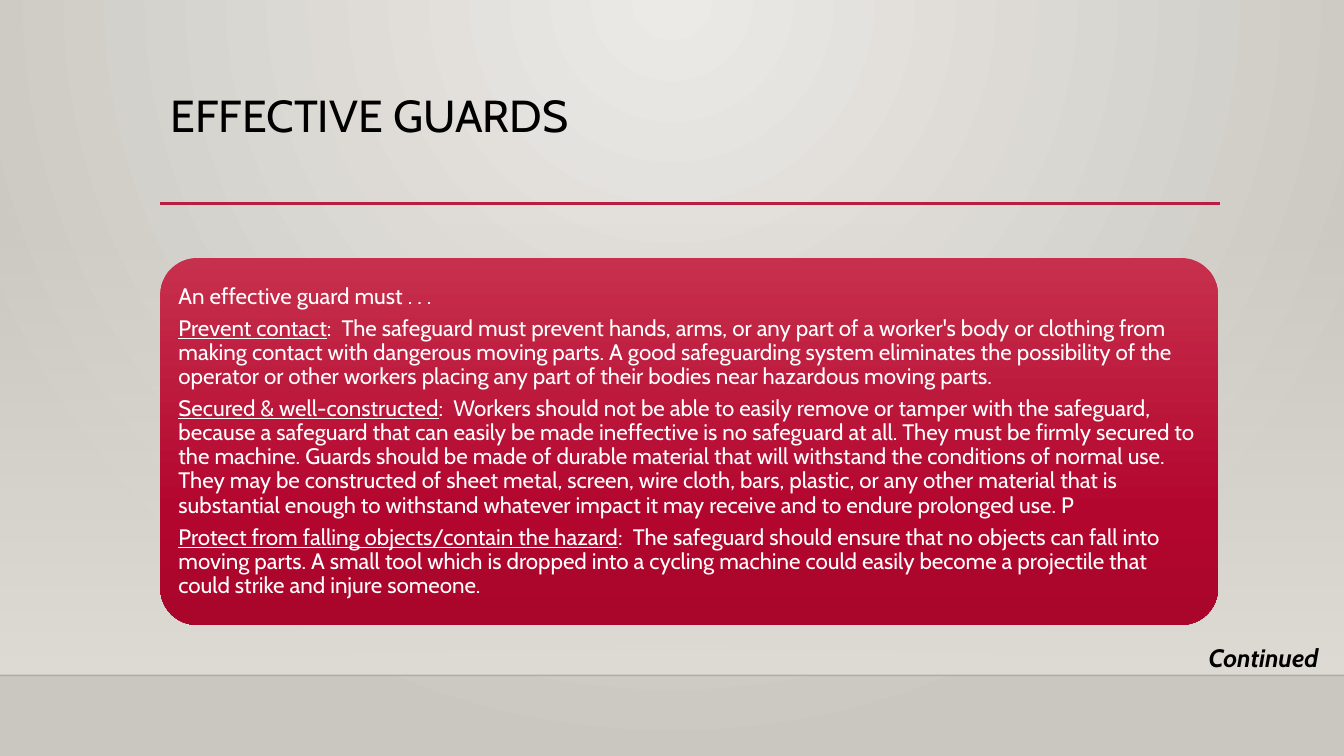
from lxml import etree
from pptx import Presentation
from pptx.dml.color import RGBColor
from pptx.enum.shapes import MSO_CONNECTOR, MSO_SHAPE
from pptx.enum.text import MSO_ANCHOR, MSO_AUTO_SIZE, PP_ALIGN
from pptx.oxml.ns import qn
from pptx.util import Inches, Pt

# Content
TITLE = "EFFECTIVE GUARDS"
FOOTER = "Continued"
GUARD_RULES = [  # underlined term, explanation
    ("", "An effective guard must . . ."),
    ("Prevent contact",
     ":  The safeguard must prevent hands, arms, or any part of a worker's body or clothing "
     "from making contact with dangerous moving parts. A good safeguarding system eliminates "
     "the possibility of the operator or other workers placing any part of their bodies near "
     "hazardous moving parts."),
    ("Secured & well-constructed",
     ":  Workers should not be able to easily remove or tamper with the safeguard, because a "
     "safeguard that can easily be made ineffective is no safeguard at all. They must be "
     "firmly secured to the machine. Guards should be made of durable material that will "
     "withstand the conditions of normal use. They may be constructed of sheet metal, screen, "
     "wire cloth, bars, plastic, or any other material that is substantial enough to withstand "
     "whatever impact it may receive and to endure prolonged use. P"),
    ("Protect from falling objects/contain the hazard",
     ":  The safeguard should ensure that no objects can fall into moving parts. A small tool "
     "which is dropped into a cycling machine could easily become a projectile that could "
     "strike and injure someone."),
]

# Look
COLORS = {
    "text": "000000", "panel text": "FFFFFF", "rule": "B71E42", "floor line": "000001",
    "center": "ECEAE7", "edge": "CAC7C1", "wall": "DFDBD5",
    "panel top": "C7304C", "panel middle": "B3062F", "panel bottom": "AA062C",
}
FONT = "Cabin"
WIDTH, HEIGHT = 13.33, 7.5
FLOOR = 6.7
WALL_TOP = 2.21
LEFT = 1.59
PANEL = (LEFT, 2.56, 10.49, 3.64)
PANEL_INSET = 0.11
DOWNWARD = '<a:lin ang="5400000" scaled="0"/>'
FROM_TOP_CENTER = ('<a:path path="circle"><a:fillToRect l="43000" t="0" r="43000" b="100000"/>'
                   '</a:path>')
NAMESPACE = 'xmlns:a="http://schemas.openxmlformats.org/drawingml/2006/main"'


def set_all(target, values):
    for name, value in values.items():
        setattr(target, name, value)


def style_font(font, size, color, **values):
    set_all(font, {"name": FONT, "size": Pt(size), **values})
    font.color.rgb = RGBColor.from_string(COLORS[color])


def apply_gradient(fill, properties, stops, direction):
    """Fill with (position %, color, opacity %) stops."""
    fill.solid()
    stop_xml = "".join(
        f'<a:gs pos="{position * 1000}"><a:srgbClr val="{COLORS[color]}">'
        f'<a:alpha val="{opacity * 1000}"/></a:srgbClr></a:gs>'
        for position, color, opacity in stops)
    gradient = etree.fromstring(
        f'<a:gradFill {NAMESPACE} rotWithShape="1"><a:gsLst>{stop_xml}</a:gsLst>'
        f'{direction}</a:gradFill>')
    properties.replace(properties.find(qn("a:solidFill")), gradient)


def add_gradient_shape(kind, box, stops):
    shape = slide.shapes.add_shape(kind, *map(Inches, box))
    shape.shadow.inherit = False
    shape.line.fill.background()
    apply_gradient(shape.fill, shape.element.spPr, stops, DOWNWARD)
    return shape


def add_rule(left, right, top, color, width):
    rule = slide.shapes.add_connector(
        MSO_CONNECTOR.STRAIGHT, Inches(left), Inches(top), Inches(right), Inches(top))
    rule.line.color.rgb = RGBColor.from_string(COLORS[color])
    rule.line.width = Pt(width)
    etree.SubElement(rule.element.spPr, qn("a:effectLst"))
    return rule


def place(shape, box):
    set_all(shape, dict(zip(("left", "top", "width", "height"), map(Inches, box))))


presentation = Presentation()
set_all(presentation, {"slide_width": Inches(WIDTH), "slide_height": Inches(HEIGHT)})
slide = presentation.slides.add_slide(presentation.slide_layouts[1])

# Background, wall and floor
background_fill = slide.background.fill
background_fill.solid()
apply_gradient(background_fill, slide.element.find(".//" + qn("p:bgPr")),
               [(0, "center", 100), (100, "edge", 100)], FROM_TOP_CENTER)
add_gradient_shape(MSO_SHAPE.RECTANGLE, (0, WALL_TOP, WIDTH, FLOOR - WALL_TOP),
                   [(0, "wall", 0), (100, "wall", 100)])
floor_line = add_rule(0, WIDTH, FLOOR, "floor line", 1)
floor_color = floor_line.element.spPr.find(".//" + qn("a:srgbClr"))
etree.SubElement(floor_color, qn("a:alpha"), val="20000")

# Title and its rule
add_rule(LEFT, 12.1, 2.02, "rule", 2.5)
title = slide.shapes.title
place(title, (LEFT, 0.88, 10.5, 1.15))
title.text_frame.text = TITLE
set_all(title.text_frame, {"vertical_anchor": MSO_ANCHOR.TOP, "word_wrap": True,
                           "auto_size": MSO_AUTO_SIZE.NONE})
heading = title.text_frame.paragraphs[0]
set_all(heading, {"alignment": PP_ALIGN.LEFT, "line_spacing": 0.9})
style_font(heading.font, 32, "text")

# Red panel
panel = add_gradient_shape(
    MSO_SHAPE.ROUNDED_RECTANGLE, PANEL,
    [(0, "panel top", 100), (69, "panel middle", 100), (100, "panel bottom", 100)])
panel.adjustments[0] = 0.1

# Guard rules, raised above the panel
body = slide.placeholders[1]
slide.shapes.element.append(body.element)
left, top, width, height = PANEL
place(body, (left + PANEL_INSET, top + PANEL_INSET,
             width - 2 * PANEL_INSET, height - 2 * PANEL_INSET))
frame = body.text_frame
set_all(frame, {"vertical_anchor": MSO_ANCHOR.MIDDLE, "word_wrap": True,
                "auto_size": MSO_AUTO_SIZE.NONE})
set_all(frame, dict.fromkeys(
    ("margin_left", "margin_top", "margin_right", "margin_bottom"), Inches(0.07)))
for index, (term, explanation) in enumerate(GUARD_RULES):
    paragraph = frame.add_paragraph() if index else frame.paragraphs[0]
    set_all(paragraph, {"alignment": PP_ALIGN.LEFT, "line_spacing": 0.9,
                        "space_before": Pt(0), "space_after": Pt(5.6)})
    properties = paragraph._p.get_or_add_pPr()
    properties.set("marL", "0")
    properties.set("indent", "0")
    etree.SubElement(properties, qn("a:buNone"))
    for text, underline in ((term, True), (explanation, False)):
        if text:
            run = paragraph.add_run()
            run.text = text
            style_font(run.font, 16, "panel text", underline=underline)

# Continuation note
note = slide.shapes.add_textbox(*map(Inches, (11.89, 6.32, 1.44, 0.4)))
note.text_frame.word_wrap = True
note.text_frame.text = FOOTER
style_font(note.text_frame.paragraphs[0].runs[0].font, 18, "text", bold=True, italic=True)

presentation.save("out.pptx")
